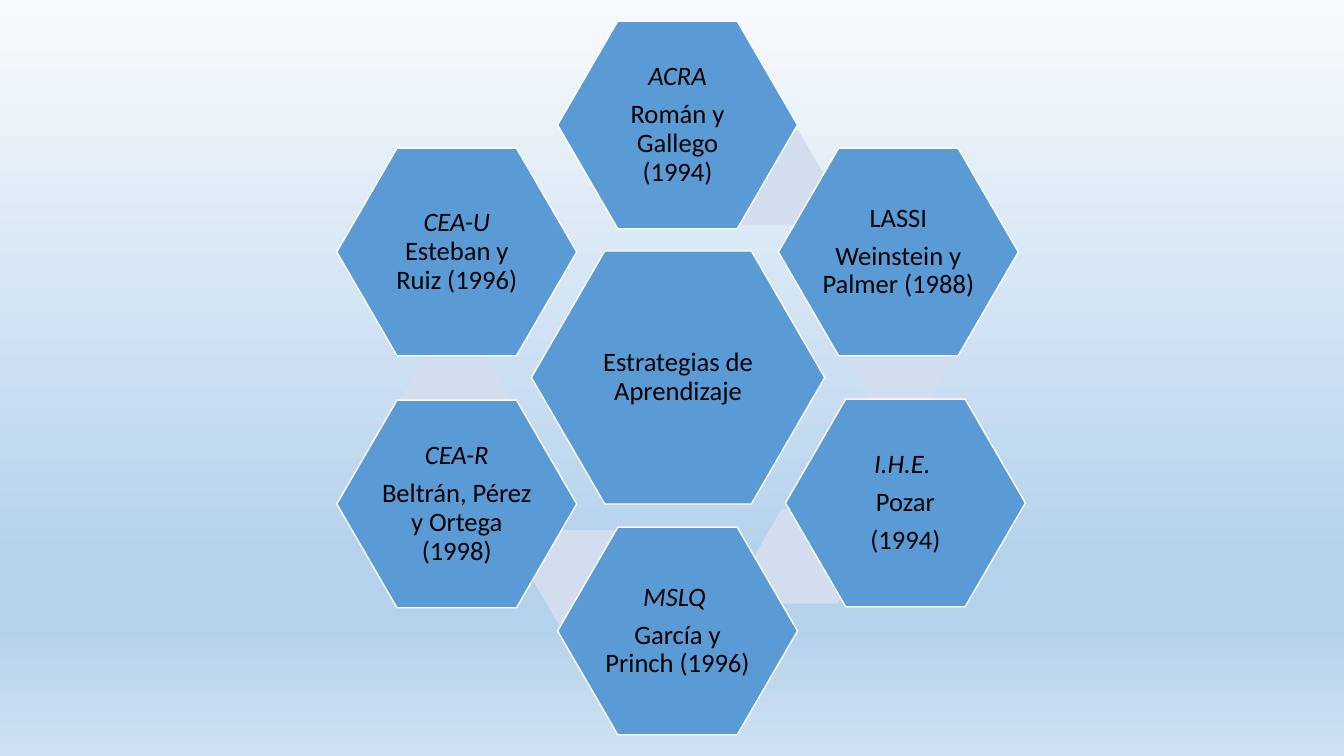
from copy import deepcopy

from pptx import Presentation
from pptx.dml.color import RGBColor
from pptx.enum.shapes import MSO_SHAPE
from pptx.enum.text import MSO_ANCHOR, PP_ALIGN
from pptx.oxml.ns import qn
from pptx.util import Inches, Pt

BLUE = RGBColor(0x5B, 0x9B, 0xD5)
PALE = RGBColor(0xD2, 0xDE, 0xEF)
WHITE = RGBColor(0xFF, 0xFF, 0xFF)
BLACK = RGBColor(0x00, 0x00, 0x00)
SKY_STOPS = [
    (0, RGBColor(0xF7, 0xFA, 0xFD)),
    (0.74, RGBColor(0xB5, 0xD2, 0xEC)),
    (0.83, RGBColor(0xB5, 0xD2, 0xEC)),
    (1, RGBColor(0xCE, 0xE1, 0xF2)),
]

FRAME_FORMAT = {
    "word_wrap": True,
    "vertical_anchor": MSO_ANCHOR.MIDDLE,
    "margin_left": Inches(0.03),
    "margin_right": Inches(0.03),
    "margin_top": Inches(0.03),
    "margin_bottom": Inches(0.03),
}
PARA_FORMAT = {"alignment": PP_ALIGN.CENTER, "line_spacing": 0.9, "space_after": Pt(6.65)}
FONT_FORMAT = {"name": "Calibri", "size": Pt(19)}

CENTRE_SIZE = (2.91, 2.51)
OUTER_SIZE = (2.38, 2.06)
ACCENT_SIZE = (1.1, 0.94)

# Each paragraph is a list of (text, italic) spans
CENTRE = (5.27, 2.49, [[("Estrategias de Aprendizaje", False)]])
OUTER = [
    (5.53, 0.21, [[("ACRA", True)], [("Román y Gallego (1994)", False)]]),
    (7.72, 1.47, [[("LASSI", False)], [("Weinstein y Palmer (1988)", False)]]),
    (7.79, 3.96, [[("I.H.E. ", True)], [("Pozar", False)], [("(1994)", False)]]),
    (5.53, 5.23, [[("MSLQ ", True)], [("García y Princh (1996)", False)]]),
    (3.34, 3.97, [[("CEA-R", True)], [("Beltrán, Pérez y Ortega (1998)", False)]]),
    (3.34, 1.47, [[("CEA-U", True), (" Esteban y Ruiz (1996)", False)]]),
]
ACCENTS = [(7.09, 1.29), (8.37, 3.06), (7.48, 5.05), (5.27, 5.26), (3.97, 3.49)]


def apply_format(target, values):
    for name, value in values.items():
        setattr(target, name, value)


def add_hexagon(left, top, size, color):
    hexagon = page.shapes.add_shape(
        MSO_SHAPE.HEXAGON, Inches(left), Inches(top), Inches(size[0]), Inches(size[1])
    )
    hexagon.adjustments[0] = 0.29
    hexagon.shadow.inherit = False
    hexagon.fill.solid()
    hexagon.fill.fore_color.rgb = color
    hexagon.line.fill.background()
    return hexagon


deck = Presentation()
deck.slide_width = Inches(13.33)
deck.slide_height = Inches(7.5)
page = deck.slides.add_slide(deck.slide_layouts[6])

# Background gradient, running from top to bottom
sky = page.background.fill
sky.gradient()
sky.gradient_angle = 270
stop_list = page.element.find(".//" + qn("a:gsLst"))
while len(stop_list) < len(SKY_STOPS):
    stop_list.append(deepcopy(stop_list[0]))
for stop, (position, color) in zip(sky.gradient_stops, SKY_STOPS):
    stop.position = position
    stop.color.rgb = color

# Pale accents behind the ring
for left, top in ACCENTS:
    add_hexagon(left, top, ACCENT_SIZE, PALE)

# Centre and ring of labelled hexagons
labelled = [(CENTRE, CENTRE_SIZE)] + [(item, OUTER_SIZE) for item in OUTER]
for (left, top, paragraphs), size in labelled:
    hexagon = add_hexagon(left, top, size, BLUE)
    hexagon.line.color.rgb = WHITE
    hexagon.line.width = Pt(1)
    frame = hexagon.text_frame
    apply_format(frame, FRAME_FORMAT)
    for index, spans in enumerate(paragraphs):
        para = frame.add_paragraph() if index else frame.paragraphs[0]
        apply_format(para, PARA_FORMAT)
        for text, italic in spans:
            span = para.add_run()
            span.text = text
            apply_format(span.font, FONT_FORMAT)
            span.font.italic = italic
            span.font.color.rgb = BLACK

deck.save("out.pptx")
